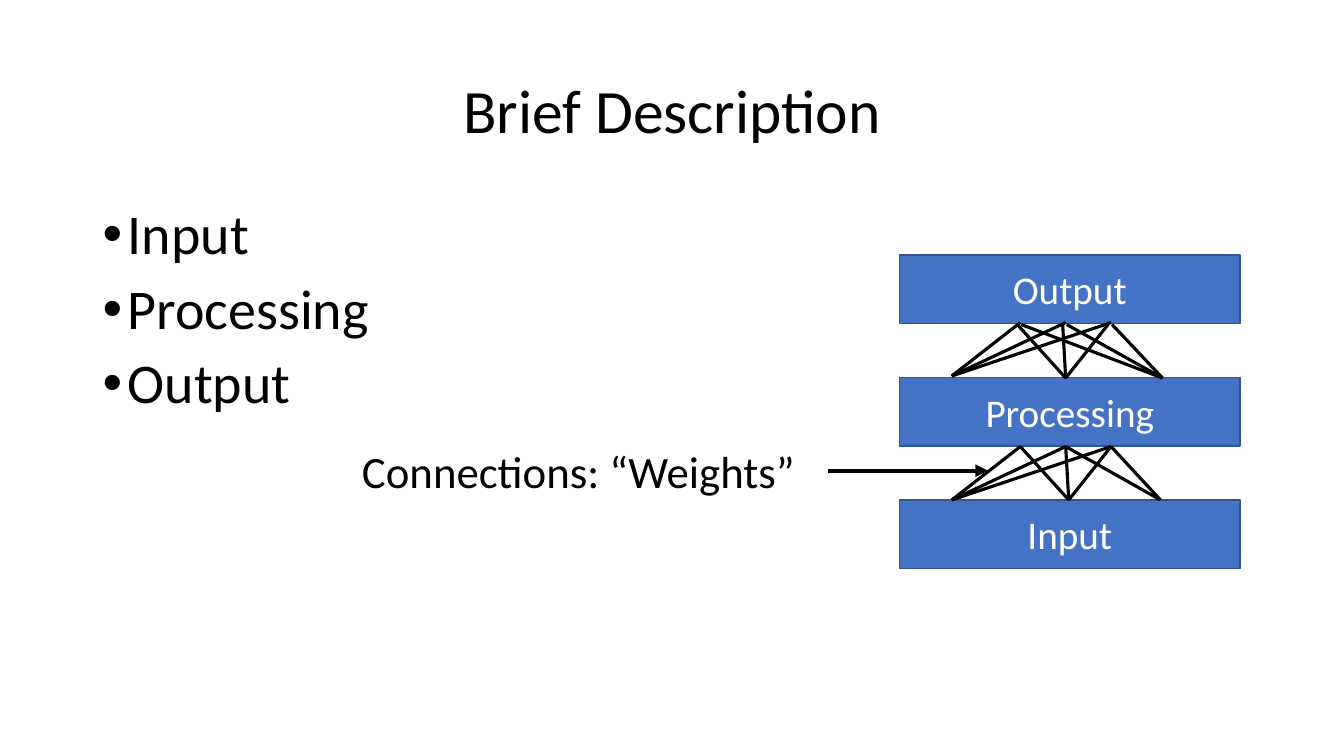
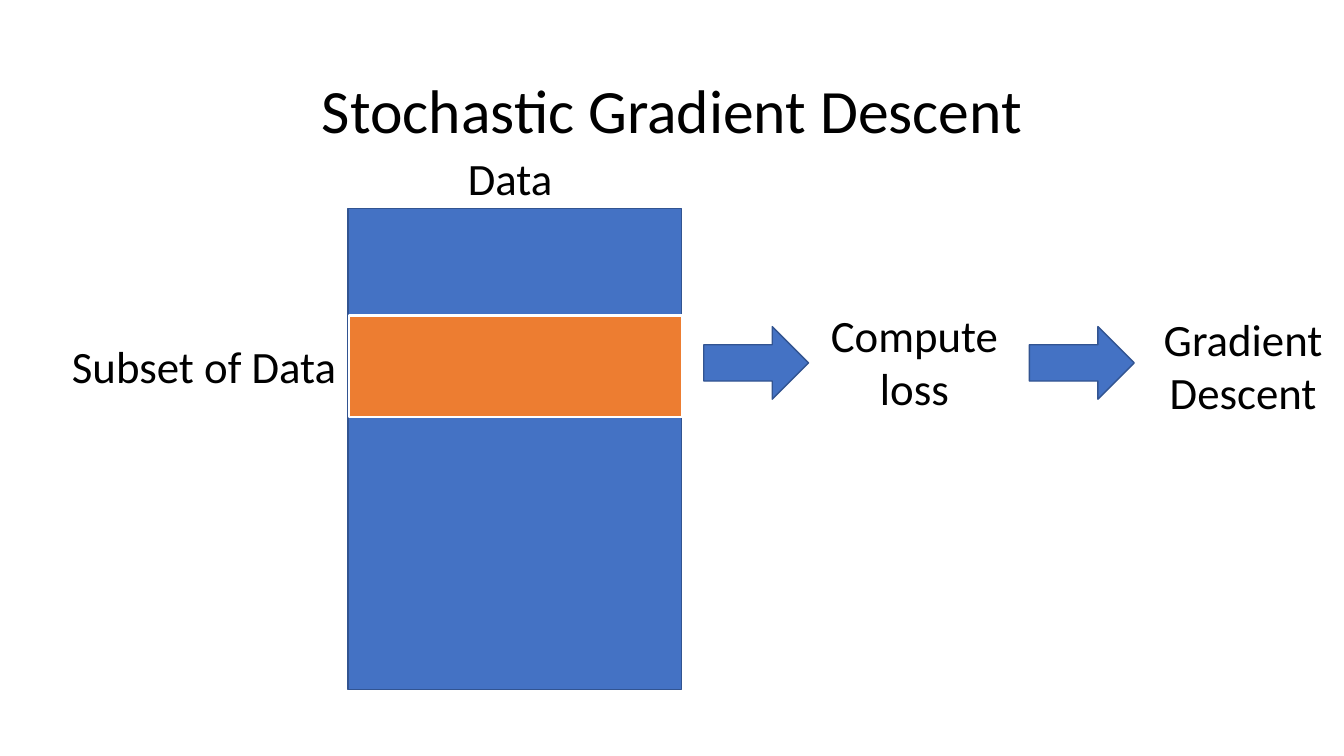
"""Two slides on neural networks: layers with weights, and stochastic gradient descent."""
from lxml.etree import SubElement
from pptx import Presentation
from pptx.dml.color import RGBColor
from pptx.enum.shapes import MSO_CONNECTOR as Connector, MSO_SHAPE as Shape
from pptx.enum.text import MSO_ANCHOR as Anchor, PP_ALIGN as Align
from pptx.oxml.ns import qn
from pptx.util import Inches, Pt

BLACK = RGBColor(0x00, 0x00, 0x00)
WHITE = RGBColor(0xFF, 0xFF, 0xFF)
BLUE = RGBColor(0x44, 0x72, 0xC4)
NAVY = RGBColor(0x32, 0x54, 0x91)
ORANGE = RGBColor(0xED, 0x7D, 0x31)
FONT = "Calibri"

STEPS = ["Input", "Processing", "Output"]
LAYER_LEFT, LAYER_TOP, LAYER_PITCH = 8.92, 2.53, 1.215
LAYER_SIZE = (3.38, 0.68)
FAN_RISE, HEAD_GAP = 0.53, 0.45
WEIGHT_FANS = [
    (9.44, 4.96, 10.12, 3),
    (10.6, 4.96, 10.12, 3),
    (11.51, 4.96, 10.57, 2),
    (9.44, 3.73, 10.12, 3),
    (10.57, 3.75, 10.09, 3),
    (11.53, 3.75, 10.13, 3),
]
WEIGHTS_LABEL = ("Connections: “Weights”", (3.32, 4.35, 4.84, 0.64))
DATA_BLOCKS = [
    (Shape.RECTANGLE, (3.45, 2.07, 3.31, 4.77), BLUE, NAVY, 1),
    (Shape.RECTANGLE, (3.46, 3.13, 3.31, 1.01), ORANGE, WHITE, 1.5),
    (Shape.RIGHT_ARROW, (6.98, 3.24, 1.04, 0.72), BLUE, NAVY, 1),
    (Shape.RIGHT_ARROW, (10.21, 3.24, 1.04, 0.72), BLUE, NAVY, 1),
]
DATA_LABELS = [
    ("Data", (3.69, 1.45, 2.74, 0.64)),
    ("Subset of Data", (0, 3.31, 4.05, 0.64)),
    ("Compute loss", (8.13, 3, 1.88, 1.18)),
    ("Gradient\vDescent", (11.39, 3.04, 1.88, 1.18)),
]


def style(para, size, color=BLACK, align=Align.CENTER):
    para.alignment = align
    para.font.name, para.font.size = FONT, Pt(size)
    para.font.color.rgb = color


def add_label(page, text, place, size=32):
    box = page.shapes.add_textbox(*map(Inches, place))
    box.text_frame.word_wrap = True
    para = box.text_frame.paragraphs[0]
    para.text = text
    style(para, size)
    return box


def add_page(deck, title):
    page = deck.slides.add_slide(deck.slide_layouts[6])
    box = add_label(page, title, (0.92, 0.4, 11.5, 1.45), 44)
    box.text_frame.vertical_anchor = Anchor.MIDDLE
    box.text_frame.paragraphs[0].line_spacing = 0.9
    return page


def add_block(page, kind, place, fill=BLUE, line=NAVY, width=1):
    block = page.shapes.add_shape(kind, *map(Inches, place))
    block.shadow.inherit = False
    block.fill.solid()
    block.fill.fore_color.rgb = fill
    block.line.color.rgb = line
    block.line.width = Pt(width)
    return block


def add_line(page, start, end, width=2.25, arrow=False):
    line = page.shapes.add_connector(Connector.STRAIGHT, *map(Inches, start + end))
    line.line.color.rgb = BLACK
    line.line.width = Pt(width)
    if arrow:
        SubElement(line.line._get_or_add_ln(), qn("a:tailEnd"), type="triangle")
    SubElement(line._element.spPr, qn("a:effectLst"))


def add_bullets(page, items, place):
    frame = page.shapes.add_textbox(*map(Inches, place)).text_frame
    frame.word_wrap = True
    for index, item in enumerate(items):
        para = frame.add_paragraph() if index else frame.paragraphs[0]
        para.text = item
        props = para._p.get_or_add_pPr()
        props.set("marL", str(Inches(0.25)))
        props.set("indent", str(-Inches(0.25)))
        SubElement(props, qn("a:buFont"), typeface="Arial")
        SubElement(props, qn("a:buChar"), char="•")
        para.line_spacing = 0.9
        para.space_before = Pt(10 if index else 0)
        style(para, 40, align=Align.LEFT)


def build_description(deck):
    page = add_page(deck, "Brief Description")
    add_bullets(page, STEPS, (0.92, 2, 6.6, 4.76))
    for row, name in enumerate(reversed(STEPS)):
        place = (LAYER_LEFT, LAYER_TOP + row * LAYER_PITCH, *LAYER_SIZE)
        frame = add_block(page, Shape.RECTANGLE, place).text_frame
        frame.vertical_anchor = Anchor.MIDDLE
        frame.paragraphs[0].text = name
        style(frame.paragraphs[0], 28, WHITE)
    for foot, bottom, first_head, count in WEIGHT_FANS:
        for step in range(count):
            head = (first_head + step * HEAD_GAP, bottom - FAN_RISE)
            add_line(page, (foot, bottom), head)
    add_line(page, (8.21, 4.67), (9.8, 4.67), 3, arrow=True)
    add_label(page, *WEIGHTS_LABEL)


def build_descent(deck):
    page = add_page(deck, "Stochastic Gradient Descent")
    for block in DATA_BLOCKS:
        add_block(page, *block)
    for label in DATA_LABELS:
        add_label(page, *label)


def main():
    deck = Presentation()
    deck.slide_width, deck.slide_height = Inches(13.33), Inches(7.5)
    build_description(deck)
    build_descent(deck)
    deck.save("out.pptx")


if __name__ == "__main__":
    main()
